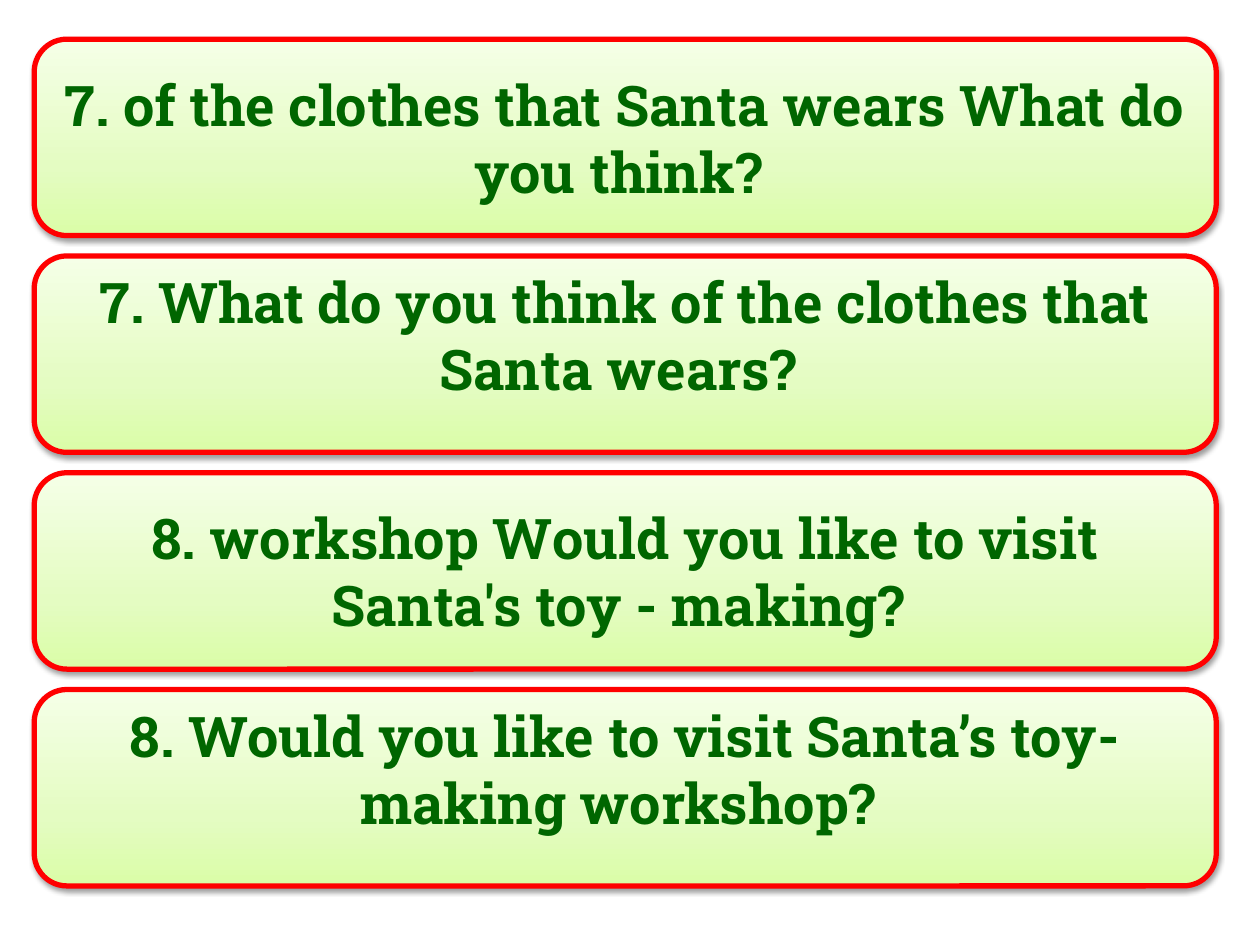
from copy import deepcopy
from dataclasses import dataclass

from lxml.etree import SubElement
from pptx import Presentation
from pptx.dml.color import RGBColor
from pptx.enum.shapes import MSO_SHAPE
from pptx.enum.text import MSO_ANCHOR, PP_ALIGN
from pptx.oxml.ns import qn
from pptx.util import Cm, Pt


@dataclass(frozen=True)
class Theme:
    """Colours, font and sizes of the deck."""
    text: str = "006600"
    border: str = "FF0000"
    shadow: str = "000000"
    gradient: tuple = ((0, "DAFDA7"), (0.35, "E4FCC2"), (1, "F5FFE7"))
    font: str = "Roboto Slab"
    text_size: float = 32
    border_width: float = 3


@dataclass(frozen=True)
class Box:
    """A rectangle in centimetres."""
    left: float
    top: float
    width: float
    height: float


THEME = Theme()
STACK = Box(0.69, 0.79, 23.83, 17.07)
GAP = 0.41
QUESTION_INSET, ANSWER_INSET = 0.13, 0.9
CARDS = (
    ("7. of the clothes that Santa wears What do you think? ", QUESTION_INSET),
    ("7. What do you think of the clothes that Santa wears? ", ANSWER_INSET),
    ("8. workshop Would you like to visit Santa's toy - making? ", QUESTION_INSET),
    ("8. Would you like to visit Santa’s toy-making workshop? ", ANSWER_INSET),
)


def write_text(frame, text, *, size, color, font, bold=False, align=PP_ALIGN.CENTER):
    """Write one formatted paragraph into a text frame."""
    para = frame.paragraphs[0]
    para.alignment = align
    span = para.add_run()
    span.text = text
    span.font.size = Pt(size)
    span.font.name = font
    span.font.bold = bold
    span.font.color.rgb = RGBColor.from_string(color)


def fill_gradient(shape, stops, angle):
    """Fill a shape with a linear gradient of three stops."""
    shape.fill.gradient()
    shape.fill.gradient_angle = angle
    stop_list = shape._element.spPr.find(qn("a:gradFill")).find(qn("a:gsLst"))
    stop_list.append(deepcopy(stop_list[0]))
    for stop, (position, color) in zip(shape.fill.gradient_stops, stops):
        stop.position = position
        stop.color.rgb = RGBColor.from_string(color)


def add_shadow(shape, color):
    """Give a shape a soft shadow that falls straight down."""
    shape.shadow.inherit = False
    effects = shape._element.spPr.find(qn("a:effectLst"))
    outer = SubElement(effects, qn("a:outerShdw"), blurRad=str(Pt(3.1)),
                       dist=str(Pt(1.6)), dir="5400000", rotWithShape="0")
    tint = SubElement(outer, qn("a:srgbClr"), val=color)
    SubElement(tint, qn("a:alpha"), val="38000")


def add_card(page, box, text, bottom_inset):
    """Draw one rounded sentence card in the given box."""
    card = page.shapes.add_shape(MSO_SHAPE.ROUNDED_RECTANGLE, Cm(box.left), Cm(box.top),
                                 Cm(box.width), Cm(box.height))
    fill_gradient(card, THEME.gradient, angle=90)
    card.line.color.rgb = RGBColor.from_string(THEME.border)
    card.line.width = Pt(THEME.border_width)
    add_shadow(card, THEME.shadow)
    frame = card.text_frame
    frame.word_wrap = True
    frame.vertical_anchor = MSO_ANCHOR.MIDDLE
    frame.margin_bottom = Cm(bottom_inset)
    write_text(frame, text, size=THEME.text_size, color=THEME.text,
               font=THEME.font, bold=True)


def add_card_stack(page, box, cards):
    """Stack cards of equal height down the given box."""
    height = (box.height - GAP * (len(cards) - 1)) / len(cards)
    for index, (text, bottom_inset) in enumerate(cards):
        top = box.top + index * (height + GAP)
        add_card(page, Box(box.left, top, box.width, height), text, bottom_inset)


def main():
    """Build and save the deck."""
    deck = Presentation()
    deck.slide_width, deck.slide_height = Cm(25.4), Cm(19.05)
    page = deck.slides.add_slide(deck.slide_layouts.get_by_name("Blank"))
    add_card_stack(page, STACK, CARDS)
    deck.save("out.pptx")


if __name__ == "__main__":
    main()
